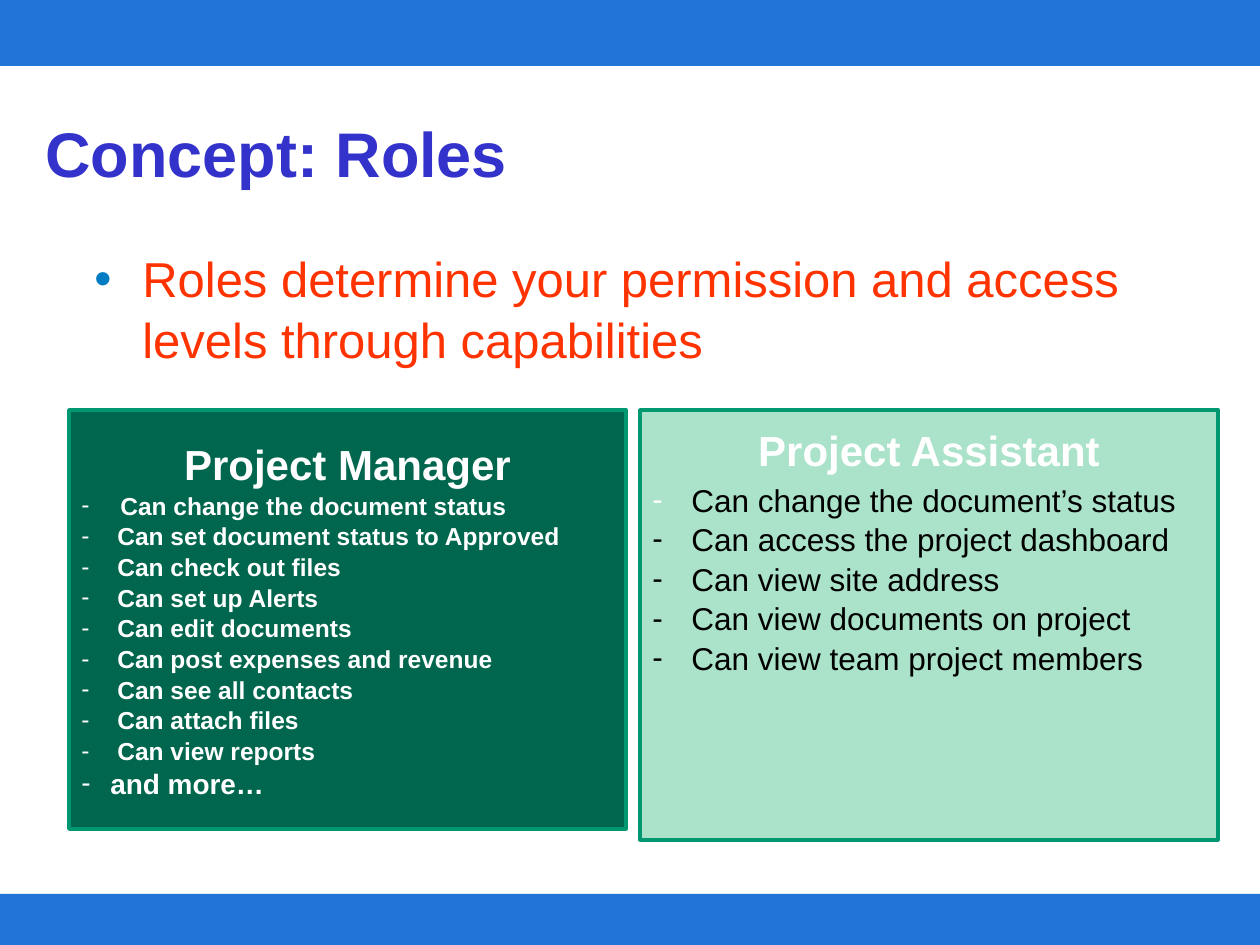
from dataclasses import dataclass

from lxml import etree
from pptx import Presentation
from pptx import util as u
from pptx.dml.color import RGBColor
from pptx.enum import shapes, text
from pptx.oxml.ns import qn


@dataclass
class Theme:
    font: str = "Arial"
    bar: str = "2175D9"
    title: str = "3333CC"
    body: str = "FF3300"
    bullet: str = "007CC3"
    manager: str = "00664D"
    assistant: str = "AAE2CA"
    edge: str = "009771"
    white: str = "FFFFFF"
    black: str = "000000"
    title_size: int = 36
    body_size: int = 28
    head_size: int = 24
    assistant_size: int = 18
    more_size: int = 16
    manager_size: int = 14
    small_size: int = 10


T = Theme()
PX = 914400 / 126


def box(x, y, w, h, fill=None, line=None, anchor=text.MSO_ANCHOR.TOP):
    at = [u.Emu(round(v * PX)) for v in (x, y, w, h)]
    if fill:
        sp = s.shapes.add_shape(shapes.MSO_SHAPE.RECTANGLE, *at)
        sp.shadow.inherit = False
        sp.fill.solid()
        sp.fill.fore_color.rgb = RGBColor.from_string(fill)
        if line:
            sp.line.color.rgb = RGBColor.from_string(line)
            sp.line.width = u.Pt(2)
        else:
            sp.line.fill.background()
    else:
        sp = s.shapes.add_textbox(*at)
    tf = sp.text_frame
    tf.word_wrap = True
    tf.vertical_anchor = anchor
    return tf


def write(tf, words, size, color, bold=False, center=False, before=0,
          bullet=None, indent=0, bullet_color=None, bullet_size=None):
    p = tf.add_paragraph() if tf.text else tf.paragraphs[0]
    p.alignment = text.PP_ALIGN.CENTER if center else text.PP_ALIGN.LEFT
    if before:
        p.space_before = u.Pt(before)
    if bullet:
        pPr = p._p.get_or_add_pPr()
        pPr.set("marL", str(round(indent * PX)))
        pPr.set("indent", str(round(-indent * PX)))
        clr = etree.SubElement(pPr, qn("a:buClr"))
        etree.SubElement(clr, qn("a:srgbClr"), val=bullet_color or color)
        etree.SubElement(pPr, qn("a:buSzPts"), val=str((bullet_size or size) * 100))
        etree.SubElement(pPr, qn("a:buFont"), typeface=T.font)
        etree.SubElement(pPr, qn("a:buChar"), char=bullet)
    r = p.add_run()
    r.text = words
    r.font.name = T.font
    r.font.size = u.Pt(size)
    r.font.bold = bold
    r.font.color.rgb = RGBColor.from_string(color)
    return p


prs = Presentation()
prs.slide_width, prs.slide_height = u.Inches(10), u.Inches(7.5)
s = prs.slides.add_slide(prs.slide_layouts[6])

for y, h in ((894, 51), (0, 66)):
    box(0, y, 1260, h, T.bar)

tf = box(33, 104, 1121, 97, anchor=text.MSO_ANCHOR.MIDDLE)
write(tf, "Concept: Roles", T.title_size, T.title, bold=True)

tf = box(82, 241, 1086, 140)
p = write(tf, "Roles determine your permission and access levels through capabilities",
          T.body_size, T.body, bullet="•", indent=48, bullet_color=T.bullet)
p.line_spacing = 1.03

tf = box(69, 410, 557, 419, T.manager, T.edge, text.MSO_ANCHOR.MIDDLE)
write(tf, "Project Manager", T.head_size, T.white, bold=True, center=True)
capabilities = ["Can change the document status", "Can set document status to Approved",
                "Can check out files", "Can set up Alerts", "Can edit documents",
                "Can post expenses and revenue", "Can see all contacts",
                "Can attach files", "Can view reports"]
for i, words in enumerate(capabilities):
    write(tf, words, T.manager_size, T.white, bold=True, before=0.7, bullet="-",
          indent=36 if i else 39, bullet_size=None if i else T.small_size)
write(tf, "and more…", T.more_size, T.white, bold=True, before=0.7, bullet="-", indent=29)

tf = box(640, 410, 578, 430, T.assistant, T.edge)
tf.margin_top = u.Emu(round(15 * PX))
write(tf, "Project Assistant", T.head_size, T.white, bold=True, center=True)
capabilities = ["Can change the document’s status", "Can access the project dashboard",
                "Can view site address", "Can view documents on project",
                "Can view team project members"]
for i, words in enumerate(capabilities):
    write(tf, words, T.assistant_size, T.black, before=1 if i else 3, bullet="-",
          indent=39, bullet_color=None if i else T.white)

prs.save("out.pptx")
